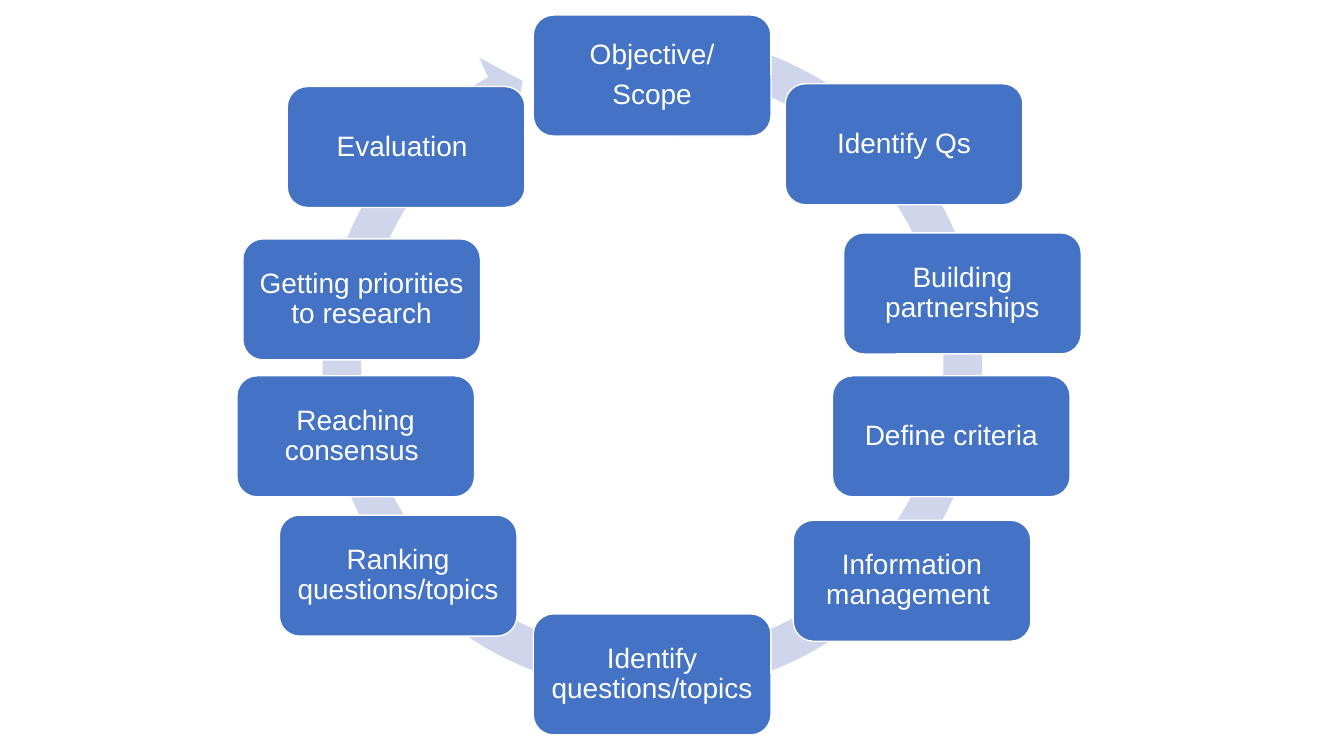
from typing import NamedTuple

from pptx import Presentation
from pptx.dml.color import RGBColor
from pptx.enum.shapes import MSO_SHAPE
from pptx.enum.text import MSO_ANCHOR, PP_ALIGN
from pptx.util import Cm, Pt

ROUNDED = MSO_SHAPE.ROUNDED_RECTANGLE
CIRCULAR_ARROW = MSO_SHAPE.CIRCULAR_ARROW
MIDDLE = MSO_ANCHOR.MIDDLE
CENTER = PP_ALIGN.CENTER

BLUE = RGBColor(0x44, 0x72, 0xC4)
PALE_BLUE = RGBColor(0xCF, 0xD5, 0xEA)
WHITE = RGBColor(0xFF, 0xFF, 0xFF)

STEP_WIDTH, STEP_HEIGHT = Cm(5.99), Cm(3.05)
STEP_INSET = Cm(0.2)
CYCLE_LEFT, CYCLE_TOP, CYCLE_SIZE = Cm(7.59), Cm(0.3), Cm(17.7)
# Ring thickness, head angle, end angle, start angle, head width
CYCLE_ADJUSTMENTS = (0.055, 3.307, 143.886, 170.233, 0.058)


class Step(NamedTuple):
    label: str
    left: float  # cm
    top: float  # cm


# Clockwise from the top; a newline starts a new paragraph
STEPS = (
    Step("Objective/\nScope", 13.44, 0.38),
    Step("Identify Qs", 19.79, 2.11),
    Step("Building partnerships", 21.26, 5.87),
    Step("Define criteria", 20.98, 9.47),
    Step("Information management ", 19.99, 13.11),
    Step("Identify questions/topics", 13.44, 15.47),
    Step("Ranking questions/topics", 7.04, 12.98),
    Step("Reaching consensus ", 5.97, 9.47),
    Step("Getting priorities to research", 6.12, 6.02),
    Step("Evaluation ", 7.24, 2.18),
)


def add_cycle_arrow(slide) -> None:
    arrow = slide.shapes.add_shape(
        CIRCULAR_ARROW, CYCLE_LEFT, CYCLE_TOP, CYCLE_SIZE, CYCLE_SIZE
    )
    for index, value in enumerate(CYCLE_ADJUSTMENTS):
        arrow.adjustments[index] = value
    arrow.shadow.inherit = False
    arrow.fill.solid()
    arrow.fill.fore_color.rgb = PALE_BLUE
    arrow.line.fill.background()


def add_step(slide, step: Step) -> None:
    box = slide.shapes.add_shape(
        ROUNDED, Cm(step.left), Cm(step.top), STEP_WIDTH, STEP_HEIGHT
    )
    box.shadow.inherit = False
    box.fill.solid()
    box.fill.fore_color.rgb = BLUE
    box.line.color.rgb = WHITE
    box.line.width = Pt(1)

    frame = box.text_frame
    frame.word_wrap = True
    frame.vertical_anchor = MIDDLE
    frame.margin_left = frame.margin_right = STEP_INSET
    frame.margin_top = frame.margin_bottom = STEP_INSET
    frame.text = step.label
    for paragraph in frame.paragraphs:
        paragraph.alignment = CENTER
        paragraph.line_spacing = 0.9
        paragraph.space_after = Pt(7)
        paragraph.font.name = "Arial"
        paragraph.font.size = Pt(20)
        paragraph.font.color.rgb = WHITE


def main() -> None:
    presentation = Presentation()
    presentation.slide_width = Cm(33.87)
    presentation.slide_height = Cm(19.05)
    slide = presentation.slides.add_slide(presentation.slide_layouts[6])
    add_cycle_arrow(slide)
    for step in STEPS:
        add_step(slide, step)
    presentation.save("out.pptx")


if __name__ == "__main__":
    main()
